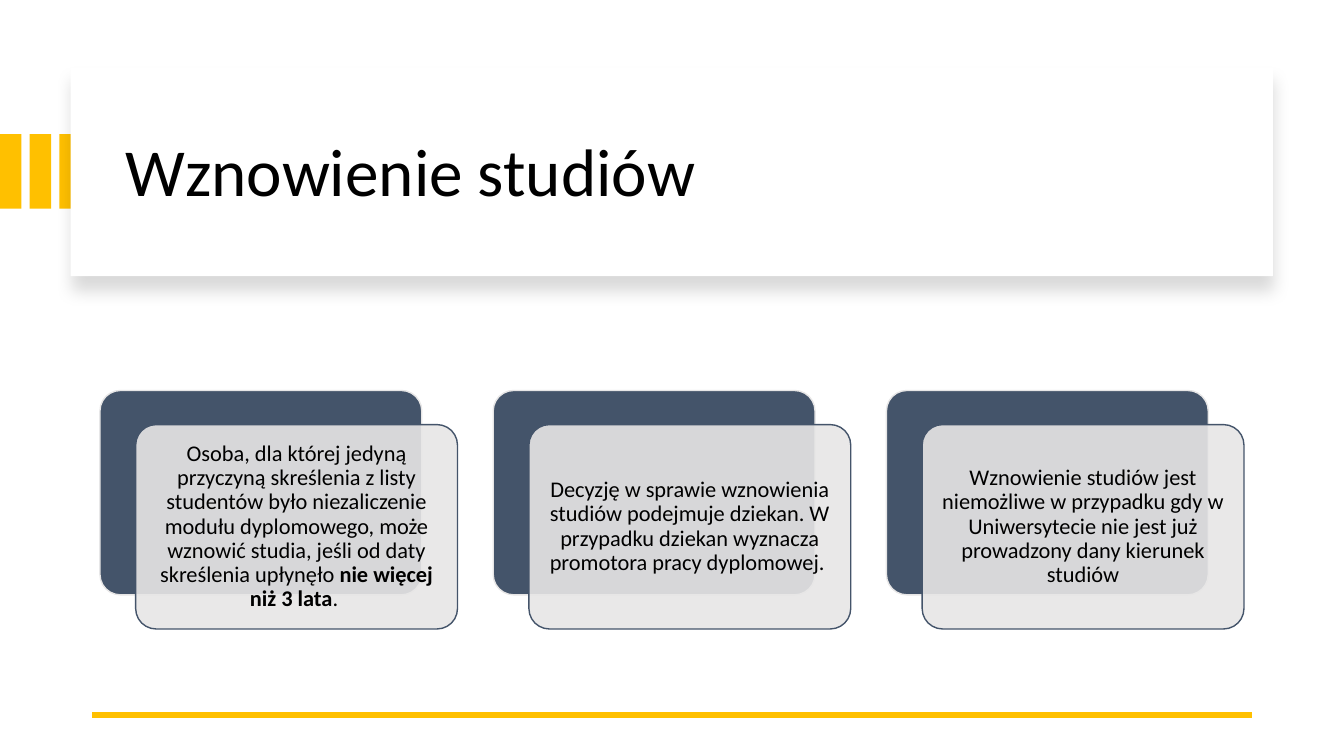
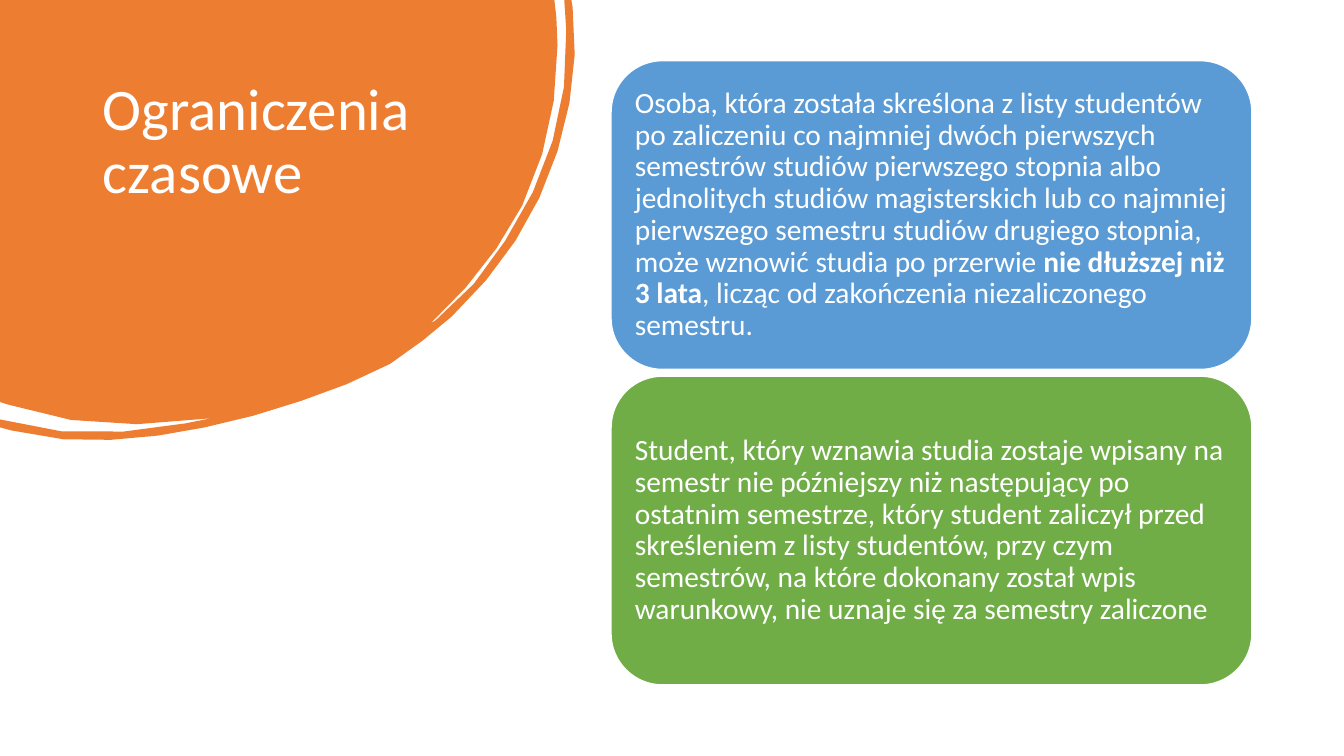
import dataclasses
import math

import lxml.etree
import pptx
import pptx.dml.color
import pptx.enum.shapes
import pptx.enum.text
import pptx.oxml.ns
import pptx.util

Cm = pptx.util.Cm
Pt = pptx.util.Pt
qn = pptx.oxml.ns.qn
SHAPE = pptx.enum.shapes.MSO_SHAPE
ANCHOR = pptx.enum.text.MSO_ANCHOR
ALIGN = pptx.enum.text.PP_ALIGN


@dataclasses.dataclass(frozen=True)
class Theme:
    font: str = "Calibri"
    black: str = "000000"
    white: str = "FFFFFF"
    gold: str = "FFC000"
    navy: str = "44546A"
    mist: str = "E7E6E6"
    orange: str = "ED7D31"
    blue: str = "5B9BD5"
    green: str = "70AD47"
    title_size: int = 48
    side_title_size: int = 42
    card_size: int = 16
    panel_size: int = 21
    line_spacing: float = 0.9


THEME = Theme()


def rgb(code):
    return pptx.dml.color.RGBColor.from_string(code)


def write_text(frame, *runs, size, color, align=ALIGN.LEFT, anchor=ANCHOR.MIDDLE,
               inset=None):
    """Fill a text frame; each run is a string, or a (string, bold) pair."""
    frame.word_wrap = True
    frame.vertical_anchor = anchor
    if inset is not None:
        frame.margin_left = frame.margin_right = Cm(inset)
        frame.margin_top = frame.margin_bottom = Cm(inset)
    paragraph = frame.paragraphs[0]
    paragraph.alignment = align
    paragraph.line_spacing = THEME.line_spacing
    for item in runs:
        text, bold = (item, False) if isinstance(item, str) else item
        run = paragraph.add_run()
        run.text = text
        run.font.name = THEME.font
        run.font.size = Pt(size)
        run.font.bold = bold
        run.font.color.rgb = rgb(color)


def curve_points(start, c1, c2, end, spacing=1.4):
    """Points along a cubic curve, about evenly spaced, without its start."""
    steps = max(1, round(math.dist(start, end) / spacing))
    for step in range(1, steps + 1):
        t = step / steps
        u = 1 - t
        yield tuple(u ** 3 * a + 3 * u * u * t * b + 3 * u * t * t * c + t ** 3 * d
                    for a, b, c, d in zip(start, c1, c2, end))


class Deck:
    def __init__(self):
        self.presentation = pptx.Presentation()
        self.presentation.slide_width = Cm(33.87)
        self.presentation.slide_height = Cm(19.05)
        self.slide = None

    def new_slide(self):
        self.slide = self.presentation.slides.add_slide(
            self.presentation.slide_layouts[6])

    def paint(self, shape, fill, line=None, opacity=None):
        shape.shadow.inherit = False
        shape.fill.solid()
        shape.fill.fore_color.rgb = rgb(fill)
        if opacity is not None:
            color = shape.fill._xPr.find(qn("a:solidFill"))[0]
            lxml.etree.SubElement(color, qn("a:alpha"), val=str(opacity * 1000))
        if line is None:
            shape.line.fill.background()
        else:
            shape.line.color.rgb = rgb(line)
            shape.line.width = Pt(1)
        return shape

    def box(self, left, top, width, height, fill, kind=SHAPE.RECTANGLE,
            corner=None, **paint):
        shape = self.slide.shapes.add_shape(
            kind, Cm(left), Cm(top), Cm(width), Cm(height))
        if corner is not None:
            shape.adjustments[0] = corner
        return self.paint(shape, fill, **paint)

    def rounded(self, *place, **style):
        return self.box(*place, kind=SHAPE.ROUNDED_RECTANGLE, **style)

    def soft_shadow(self, shape, blur, distance, opacity):
        """Cast a shadow straight down."""
        effects = shape._element.spPr.find(qn("a:effectLst"))
        shadow = lxml.etree.SubElement(
            effects, qn("a:outerShdw"), blurRad=str(Pt(blur)),
            dist=str(Pt(distance)), dir="5400000", algn="t", rotWithShape="0")
        color = lxml.etree.SubElement(shadow, qn("a:srgbClr"), val=THEME.black)
        lxml.etree.SubElement(color, qn("a:alpha"), val=str(opacity * 1000))

    def title(self, left, top, width, height, text, **style):
        heading = self.slide.shapes.add_textbox(
            Cm(left), Cm(top), Cm(width), Cm(height))
        write_text(heading.text_frame, text, **style)

    def rule(self, start, end, y, color, weight):
        rule = self.slide.shapes.add_connector(
            pptx.enum.shapes.MSO_CONNECTOR.STRAIGHT,
            Cm(start), Cm(y), Cm(end), Cm(y))
        rule.line.color.rgb = rgb(color)
        rule.line.width = Pt(weight)
        lxml.etree.SubElement(rule._element.spPr, qn("a:effectLst"))

    def outline(self, segments, fill):
        """Closed outline from the corner; 2 numbers are a line, 6 a curve."""
        points = [(0, 0)]
        for segment in segments:
            pairs = list(zip(segment[::2], segment[1::2]))
            points += pairs if len(pairs) == 1 else curve_points(points[-1], *pairs)
        builder = self.slide.shapes.build_freeform(0, 0)
        builder.add_line_segments([(Cm(x), Cm(y)) for x, y in points[1:]], close=True)
        self.paint(builder.convert_to_shape(), fill)


RESUMPTION_RULES = [
    ["Osoba, dla której jedyną przyczyną skreślenia z listy studentów było "
     "niezaliczenie modułu dyplomowego, może wznowić studia, jeśli od daty "
     "skreślenia upłynęło ", ("nie więcej niż 3 lata", True), ". "],
    ["Decyzję w sprawie wznowienia studiów podejmuje dziekan. W przypadku dziekan "
     "wyznacza promotora pracy dyplomowej. "],
    ["Wznowienie studiów jest niemożliwe w przypadku gdy w Uniwersytecie nie jest "
     "już prowadzony dany kierunek studiów"],
]

TIME_LIMITS = [
    (THEME.blue,
     ["Osoba, która została skreślona z listy studentów po zaliczeniu co najmniej "
      "dwóch pierwszych semestrów studiów pierwszego stopnia albo jednolitych "
      "studiów magisterskich lub co najmniej pierwszego semestru studiów drugiego "
      "stopnia, może wznowić studia po przerwie ",
      ("nie dłuższej niż 3 lata", True),
      ", licząc od zakończenia niezaliczonego semestru."]),
    (THEME.green,
     ["Student, który wznawia studia zostaje wpisany na semestr nie późniejszy niż "
      "następujący po ostatnim semestrze, który student zaliczył przed skreśleniem "
      "z listy studentów, przy czym semestrów, na które dokonany został wpis "
      "warunkowy, nie uznaje się za semestry zaliczone"]),
]

BLOB = [
    # Inner edge of the disc
    (13.97, 0), (14.02, 0.43),
    (14.05, 0.66, 14.05, 0.91, 14.05, 1.14),
    (14.05, 2.57, 13.77, 3.91, 13.16, 5.18),
    (12.58, 6.3, 11.78, 7.3, 10.85, 8.15),
    # Back up along the inside of the ring
    (10.97, 8.08),
    (11.68, 7.51, 12.26, 6.85, 12.73, 6.07),
    (13.79, 4.47, 14.35, 2.72, 14.27, 0.76),
    (14.22, 0), (14.4, 0), (14.43, 0.18),
    # Outside of the ring
    (14.58, 1.37, 14.43, 2.59, 14.05, 3.81),
    (13.54, 5.44, 12.62, 6.81, 11.38, 7.98),
    (10.64, 8.59), (9.83, 9.17),
    (9.53, 9.37, 9.14, 9.53, 8.74, 9.68),
    (7.59, 10.13, 6.4, 10.52, 5.16, 10.77),
    (3.99, 11.02, 2.79, 11.15, 1.6, 11.07),
    (1.14, 11.02, 0.71, 10.97, 0.3, 10.85),
    (0, 10.77), (0, 10.57),
    # Lower inside of the ring and the foot of the disc
    (0.58, 10.74, 1.07, 10.82, 1.55, 10.87),
    (2.62, 10.95, 3.63, 10.87, 4.67, 10.67),
    (5.33, 10.54),
    (4.72, 10.62, 4.09, 10.67, 3.45, 10.69),
    (2.34, 10.69, 1.22, 10.57, 0.18, 10.19),
    (0, 10.13),
]


def resumption_slide(deck):
    deck.new_slide()

    # Gold bars behind the title panel
    for bar in range(3):
        deck.box(bar * 0.75, 3.38, 0.54, 1.88, THEME.gold)
    title_panel = deck.box(1.78, 1.7, 30.3, 5.26, THEME.white)
    deck.soft_shadow(title_panel, blur=11, distance=10, opacity=15)
    deck.title(2.91, 2.25, 28.27, 4.32, "Wznowienie studiów",
               size=THEME.title_size, color=THEME.black)
    deck.rule(31.55, 2.33, 18.01, THEME.gold, 4.5)

    # Three layered cards
    card_size = (8.11, 5.15)
    for column, runs in enumerate(RESUMPTION_RULES):
        left, top = 2.52 + column * 9.91, 9.84
        deck.rounded(left, top, *card_size, fill=THEME.navy, line=THEME.mist,
                     corner=0.1)
        card = deck.rounded(left + 0.9, top + 0.86, *card_size, fill=THEME.mist,
                            line=THEME.navy, corner=0.1, opacity=90)
        write_text(card.text_frame, *runs, size=THEME.card_size, color=THEME.black,
                   align=ALIGN.CENTER, inset=0.17)


def limits_slide(deck):
    deck.new_slide()

    # Title on the orange disc
    deck.outline(BLOB, THEME.orange)
    deck.title(2.34, 1.88, 8.94, 5.64, "Ograniczenia czasowe",
               size=THEME.side_title_size, color=THEME.white, anchor=ANCHOR.TOP)

    # Stacked panels
    for row, (color, runs) in enumerate(TIME_LIMITS):
        panel = deck.rounded(15.4, 1.53 + row * 7.95, 16.15, 7.78, fill=color,
                             line=THEME.white)
        write_text(panel.text_frame, *runs, size=THEME.panel_size,
                   color=THEME.white, inset=0.22)


def main():
    deck = Deck()
    resumption_slide(deck)
    limits_slide(deck)
    deck.presentation.save("out.pptx")


if __name__ == "__main__":
    main()
